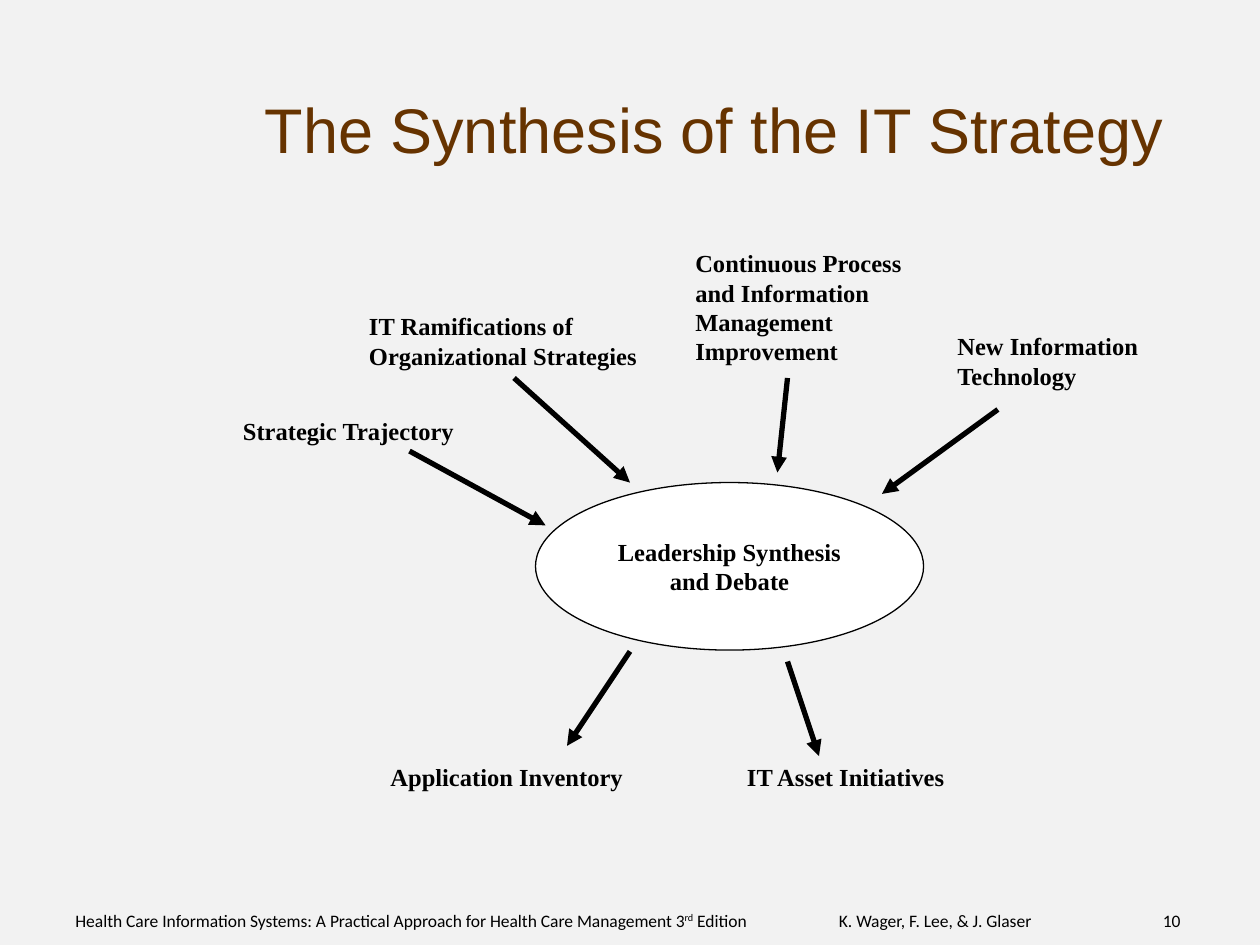
from lxml import etree
from pptx import Presentation
from pptx.dml.color import RGBColor
from pptx.enum.shapes import MSO_CONNECTOR, MSO_SHAPE
from pptx.enum.text import MSO_ANCHOR, PP_ALIGN
from pptx.oxml.ns import qn
from pptx.util import Inches, Pt

LINE = MSO_CONNECTOR.STRAIGHT
OVAL = MSO_SHAPE.OVAL
MID = MSO_ANCHOR.MIDDLE
LEFT, CENTER = PP_ALIGN.LEFT, PP_ALIGN.CENTER

HEX = {"back": "F2F2F2", "ink": "000000", "oval": "FFFFFF", "title": "663300"}
RGB = {name: RGBColor.from_string(code) for name, code in HEX.items()}
LABEL = {"name": "Times New Roman", "size": Pt(14), "bold": True}
TITLE = {"name": "Arial", "size": Pt(36), "bold": False}
FOOT = {"name": "Calibri", "size": Pt(10), "bold": False}


def add_run(para, text, style, color="ink"):
    run = para.add_run()
    run.text = text
    for key, value in style.items():
        setattr(run.font, key, value)
    run.font.color.rgb = RGB[color]
    return run


def add_box(left, top, width, height):
    box = slide.shapes.add_textbox(
        Inches(left), Inches(top), Inches(width), Inches(height))
    box.text_frame.word_wrap = True
    return box.text_frame.paragraphs[0]


prs = Presentation()
prs.slide_width, prs.slide_height = Inches(10), Inches(7.5)
slide = prs.slides.add_slide(prs.slide_layouts[5])
slide.background.fill.solid()
slide.background.fill.fore_color.rgb = RGB["back"]

# Title
title = slide.shapes.title
title.left, title.top = Inches(2), Inches(0.67)
title.width, title.height = Inches(7.67), Inches(0.7)
title.text_frame.vertical_anchor = MID
para = title.text_frame.paragraphs[0]
para.alignment = LEFT
add_run(para, "The Synthesis of the IT Strategy", TITLE, "title")

# Footer: authors at a left tab, page number at a right tab
para = add_box(0.5, 7.17, 9.08, 0.31)
tabs = etree.SubElement(para._p.get_or_add_pPr(), qn("a:tabLst"))
for pos, side in ((6.06, "l"), (8.77, "r")):
    etree.SubElement(tabs, qn("a:tab"), pos=str(Inches(pos)), algn=side)
add_run(para, "Health Care Information Systems: A Practical Approach "
        "for Health Care Management 3", FOOT)
order = add_run(para, "rd", FOOT)
order._r.get_or_add_rPr().set("baseline", "30000")
add_run(para, " Edition\tK. Wager, F. Lee, & J. Glaser\t10", FOOT)

# Central oval
oval = slide.shapes.add_shape(
    OVAL, Inches(4.25), Inches(3.83), Inches(3.08), Inches(1.33))
oval.shadow.inherit = False
oval.fill.solid()
oval.fill.fore_color.rgb = RGB["oval"]
oval.line.color.rgb = RGB["ink"]
oval.line.width = Pt(0.75)
frame = oval.text_frame
frame.word_wrap = False
frame.vertical_anchor = MID
for i, text in enumerate(("Leadership Synthesis", "and Debate")):
    para = frame.add_paragraph() if i else frame.paragraphs[0]
    para.alignment = CENTER
    add_run(para, text, LABEL)

# Inputs above and results below
labels = (
    ("IT Ramifications of Organizational Strategies", 2.83, 2.42, 2.42, 0.57),
    ("Continuous Process and Information Management Improvement",
     5.42, 1.92, 2.17, 1.03),
    ("New Information Technology", 7.5, 2.58, 1.92, 0.57),
    ("Strategic Trajectory", 1.83, 3.25, 2.17, 0.33),
    ("Application Inventory", 3, 6, 2.75, 0.33),
    ("IT Asset Initiatives", 5.83, 6, 2.42, 0.33),
)
for text, *place in labels:
    add_run(add_box(*place), text, LABEL)

# Arrows into and out of the oval
arrows = (
    (4.08, 3, 5, 3.83),
    (6.25, 3, 6.17, 3.75),
    (7.92, 3.25, 7, 3.92),
    (3.25, 3.58, 4.33, 4.17),
    (5, 5.17, 4.5, 5.92),
    (6.25, 5.25, 6.5, 6),
)
for ends in arrows:
    arrow = slide.shapes.add_connector(LINE, *map(Inches, ends))
    arrow.line.color.rgb = RGB["ink"]
    arrow.line.width = Pt(3)
    etree.SubElement(arrow.line._get_or_add_ln(), qn("a:tailEnd"),
                     type="triangle")
    etree.SubElement(arrow._element.spPr, qn("a:effectLst"))

prs.save("out.pptx")
